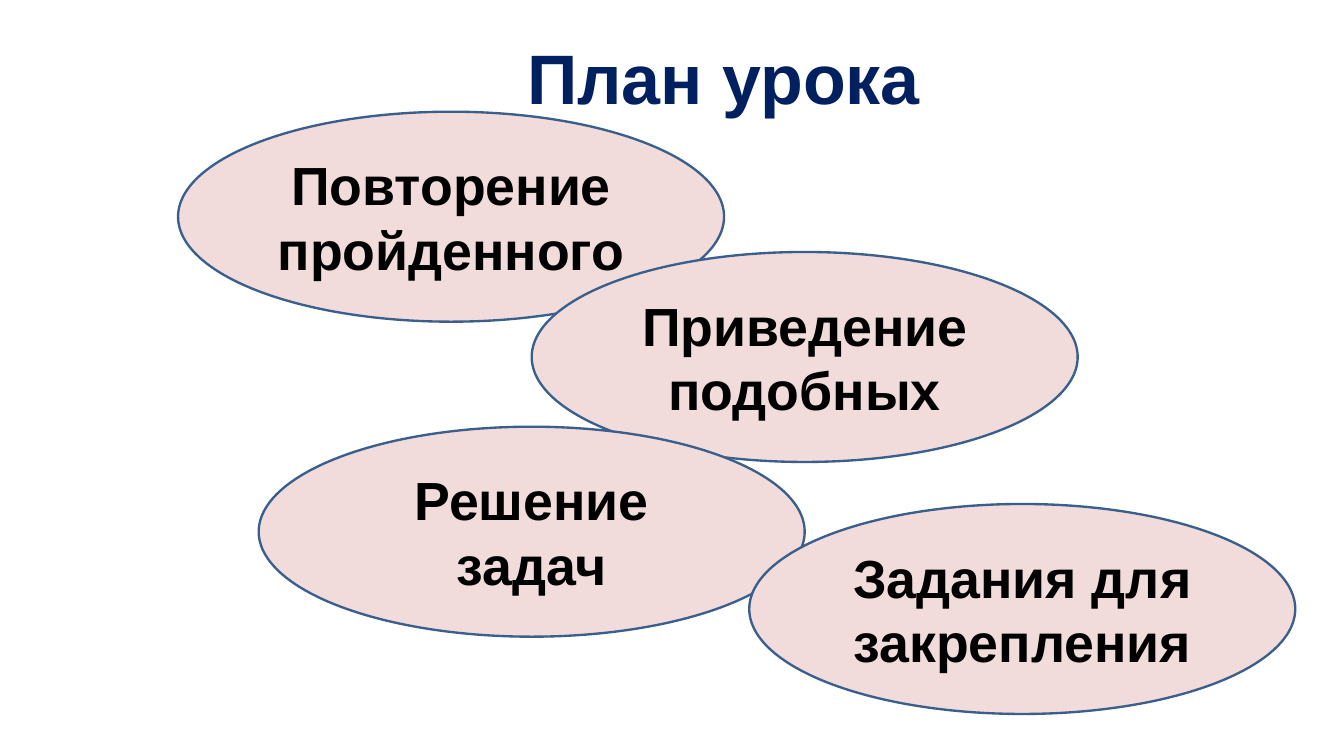
"""Builds the lesson plan slide with four overlapping ovals."""
from dataclasses import dataclass

import pptx
import pptx.dml.color
import pptx.enum.shapes
import pptx.enum.text
import pptx.util

Inches = pptx.util.Inches
Pt = pptx.util.Pt
RGB = pptx.dml.color.RGBColor.from_string


@dataclass(frozen=True)
class Theme:
    font: str = "Arial"
    heading: str = "002060"
    text: str = "000000"
    oval: str = "F2DCDB"
    outline: str = "3A5F8C"
    heading_size: int = 60
    text_size: int = 46


theme = Theme()


def write(frame, words, size, color):
    frame.vertical_anchor = pptx.enum.text.MSO_ANCHOR.MIDDLE
    paragraph = frame.paragraphs[0]
    paragraph.alignment = pptx.enum.text.PP_ALIGN.CENTER
    run = paragraph.add_run()
    run.text = words
    run.font.name = theme.font
    run.font.size = Pt(size)
    run.font.bold = True
    run.font.color.rgb = RGB(color)


deck = pptx.Presentation()
deck.slide_width = Inches(16)
deck.slide_height = Inches(9)
slide = deck.slides.add_slide(deck.slide_layouts[5])

heading = slide.shapes.title
heading.left, heading.top = Inches(6), Inches(0.27)
heading.width, heading.height = Inches(5.23), Inches(1.27)
frame = heading.text_frame
frame.word_wrap = False
frame.auto_size = pptx.enum.text.MSO_AUTO_SIZE.NONE
frame.margin_left = frame.margin_right = Inches(0.25)
frame.margin_top = frame.margin_bottom = Inches(0.13)
write(frame, "План урока", theme.heading_size, theme.heading)

stages = [
    ("Повторение пройденного", 2.12, 1.33),
    ("Приведение подобных", 6.33, 3),
    ("Решение задач", 3.08, 5.08),
    ("Задания для закрепления", 8.92, 6),
]
for words, left, top in stages:
    stage = slide.shapes.add_shape(
        pptx.enum.shapes.MSO_SHAPE.OVAL,
        Inches(left), Inches(top), Inches(6.5), Inches(2.5),
    )
    stage.shadow.inherit = False
    stage.fill.solid()
    stage.fill.fore_color.rgb = RGB(theme.oval)
    stage.line.color.rgb = RGB(theme.outline)
    stage.line.width = Pt(2)
    stage.text_frame.word_wrap = True
    write(stage.text_frame, words, theme.text_size, theme.text)

deck.save("out.pptx")
